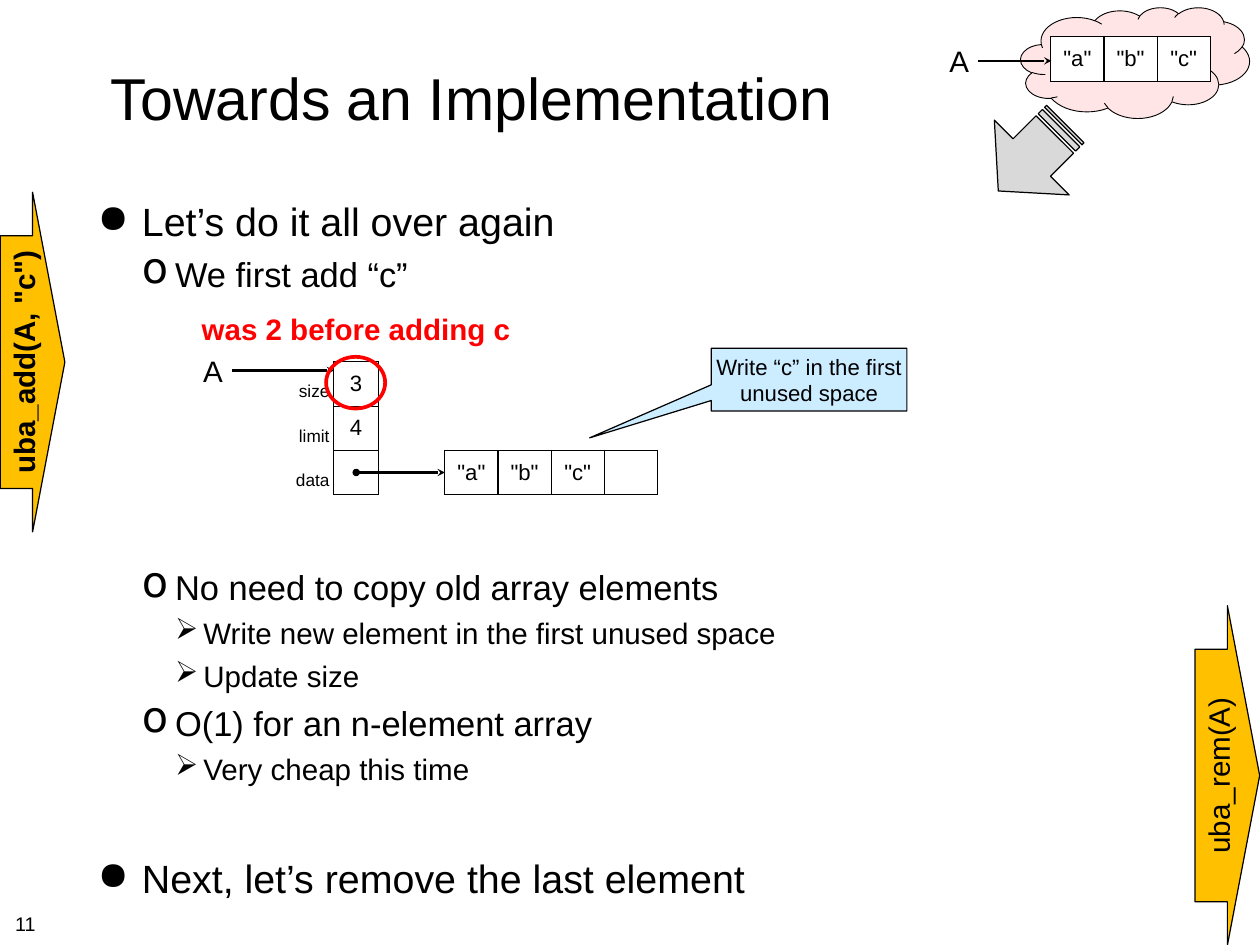
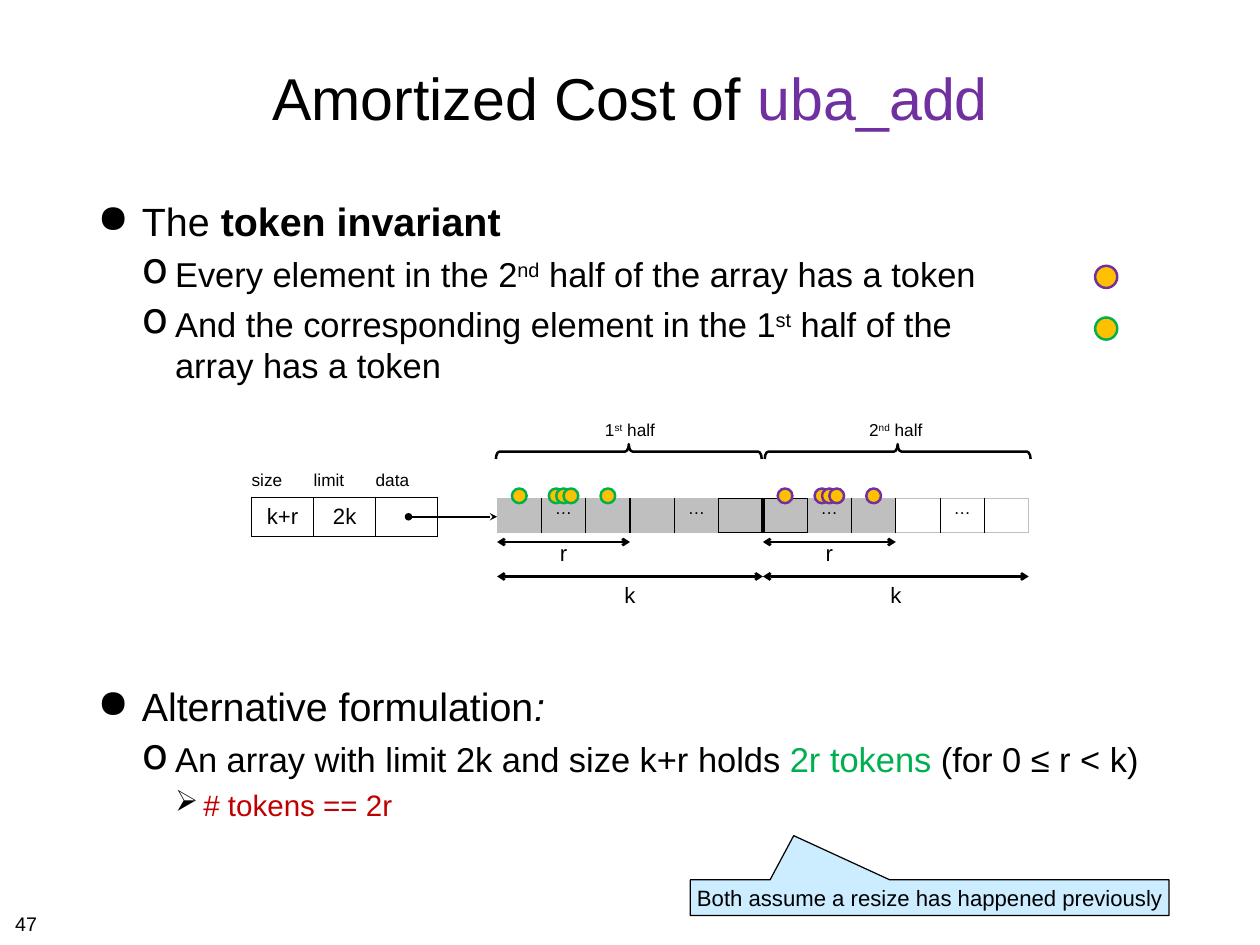
from dataclasses import dataclass, field
from typing import NamedTuple, Optional

import pptx
import pptx.dml.color
import pptx.enum.shapes
import pptx.enum.text
import pptx.oxml
import pptx.oxml.ns
import pptx.util

Pt = pptx.util.Pt
RGB = pptx.dml.color.RGBColor
SHAPE = pptx.enum.shapes.MSO_SHAPE
ALIGN = pptx.enum.text.PP_ALIGN
ANCHOR = pptx.enum.text.MSO_ANCHOR
qn = pptx.oxml.ns.qn

BLACK = RGB(0x00, 0x00, 0x00)
WHITE = RGB(0xFF, 0xFF, 0xFF)
RED = RGB(0xFF, 0x00, 0x00)
DARK_RED = RGB(0xC0, 0x00, 0x00)
PURPLE = RGB(0x70, 0x30, 0xA0)
GREEN = RGB(0x00, 0xB0, 0x50)
GOLD = RGB(0xFF, 0xC0, 0x00)
GRAY = RGB(0xBF, 0xBF, 0xBF)
LIGHT_GRAY = RGB(0xD9, 0xD9, 0xD9)
PINK = RGB(0xFF, 0xE5, 0xE5)
PALE_BLUE = RGB(0xCC, 0xEC, 0xFF)
FONT = "Arial"


class Run(NamedTuple):
    text: str
    color: RGB = BLACK
    bold: bool = False
    italic: bool = False
    superscript: bool = False


class Level(NamedTuple):
    size: float
    margin: float
    hang: float
    before: float
    bullet: str
    bullet_pct: int


LEVELS = (Level(32, 36, 36, 8, "●", 100),
          Level(28, 63, 27, 7, "o", 125),
          Level(24, 86, 23, 6, "➢", 100))


class Item(NamedTuple):
    level: int
    runs: tuple
    gap: float = 0  # room left above for a diagram


class Edge(NamedTuple):
    color: RGB = BLACK
    width: float = 1


BOX = {side: Edge() for side in "LRTB"}


@dataclass
class Cell:
    text: str = ""
    size: float = 18
    align: int = ALIGN.CENTER
    anchor: int = ANCHOR.MIDDLE
    margins: tuple = (7.2, 3.6)
    fill: Optional[RGB] = None
    edges: dict = field(default_factory=lambda: BOX)


class Half(NamedTuple):
    x: float
    brace_x: float
    ordinal: str
    suffix: str
    color: RGB


# Text
def write(p, runs, size: float, align=ALIGN.LEFT) -> None:
    p.alignment = align
    for run in runs:
        for i, piece in enumerate(run.text.split("\n")):
            if i:
                p.add_line_break()
            r = p.add_run()
            r.text = piece
            r.font.name, r.font.size = FONT, Pt(size)
            r.font.bold, r.font.italic = run.bold, run.italic
            r.font.color.rgb = run.color
            if run.superscript:
                r._r.get_or_add_rPr().set("baseline", "30000")


def set_frame(tf, margins, anchor=ANCHOR.TOP, wrap=False) -> None:
    tf.word_wrap, tf.vertical_anchor = wrap, anchor
    tf.margin_left = tf.margin_right = Pt(margins[0])
    tf.margin_top = tf.margin_bottom = Pt(margins[1])


def add_text(s, x, y, w, h, runs, size, align=ALIGN.CENTER,
             anchor=ANCHOR.TOP, margins=(7.2, 3.6), wrap=False):
    sp = s.shapes.add_textbox(Pt(x), Pt(y), Pt(w), Pt(h))
    set_frame(sp.text_frame, margins, anchor, wrap)
    write(sp.text_frame.paragraphs[0], runs, size, align)
    return sp


def add_body(s, items) -> None:
    sp = s.shapes.add_textbox(Pt(75), Pt(156), Pt(881), Pt(543))
    tf = sp.text_frame
    set_frame(tf, (4.3, 4.3), wrap=True)
    for i, item in enumerate(items):
        p = tf.add_paragraph() if i else tf.paragraphs[0]
        level = LEVELS[item.level]
        write(p, item.runs, level.size)
        p.level = item.level
        p.space_before = Pt(level.before + item.gap)
        pPr = p._p.get_or_add_pPr()
        pPr.set("marL", str(Pt(level.margin)))
        pPr.set("indent", str(-Pt(level.hang)))
        color = pptx.oxml.parse_xml(
            '<a:buClr xmlns:a="http://schemas.openxmlformats.org/drawingml/2006/main">'
            f'<a:srgbClr val="{BLACK}"/></a:buClr>')
        pPr.append(color)
        pct = pPr.makeelement(qn("a:buSzPct"), {"val": str(level.bullet_pct * 1000)})
        pPr.append(pct)
        pPr.append(pPr.makeelement(qn("a:buChar"), {"char": level.bullet}))


# Shapes, lines and tables
def add_shape(s, kind, x, y, w, h, fill=None, line=BLACK, width=1.0, rot=0, adj=()):
    sp = s.shapes.add_shape(kind, Pt(x), Pt(y), Pt(w), Pt(h))
    sp.shadow.inherit = False
    sp.rotation = rot
    for i, value in enumerate(adj):
        sp.adjustments[i] = value
    if fill is None:
        sp.fill.background()
    else:
        sp.fill.solid()
        sp.fill.fore_color.rgb = fill
    sp.line.color.rgb, sp.line.width = line, Pt(width)
    return sp


def add_callout(s, x, y, w, h, adj, text: str) -> None:
    sp = add_shape(s, SHAPE.RECTANGULAR_CALLOUT, x, y, w, h, PALE_BLUE, adj=adj)
    set_frame(sp.text_frame, (3.6, 3.6), ANCHOR.MIDDLE)
    write(sp.text_frame.paragraphs[0], [Run(text)], 18, ALIGN.CENTER)


def add_arrow(s, x1, x2, y, head="", tail="stealth", start=None) -> None:
    c = s.shapes.add_connector(pptx.enum.shapes.MSO_CONNECTOR.STRAIGHT,
                               Pt(x1), Pt(y), Pt(x2), Pt(y))
    if start is not None:
        c.begin_connect(start, 3)
    c.line.color.rgb, c.line.width = BLACK, Pt(2)
    ln = c.line._get_or_add_ln()
    for tag, kind in (("a:headEnd", head), ("a:tailEnd", tail)):
        if kind:
            ln.append(ln.makeelement(qn(tag), {"type": kind}))
    spPr = c._element.spPr
    spPr.append(spPr.makeelement(qn("a:effectLst"), {}))


def add_table(s, x, y, cols, rows, cells) -> None:
    t = s.shapes.add_table(len(rows), len(cols), Pt(x), Pt(y),
                           Pt(sum(cols)), Pt(sum(rows))).table
    t.first_row = t.horz_banding = False
    for col, w in zip(t.columns, cols):
        col.width = Pt(w)
    for row, h in zip(t.rows, rows):
        row.height = Pt(h)
    for target, cell in zip(t.iter_cells(), cells):
        target.margin_left = target.margin_right = Pt(cell.margins[0])
        target.margin_top = target.margin_bottom = Pt(cell.margins[1])
        target.vertical_anchor = cell.anchor
        tcPr = target._tc.get_or_add_tcPr()
        for side, edge in cell.edges.items():
            tcPr.append(pptx.oxml.parse_xml(
                f'<a:ln{side} xmlns:a="http://schemas.openxmlformats.org/drawingml/2006/main"'
                f' w="{Pt(edge.width)}"><a:solidFill><a:srgbClr val="{edge.color}"/>'
                f'</a:solidFill></a:ln{side}>'))
        if cell.fill is None:
            target.fill.background()
        else:
            target.fill.solid()
            target.fill.fore_color.rgb = cell.fill
        if cell.text:
            write(target.text_frame.paragraphs[0], [Run(cell.text)], cell.size, cell.align)


def add_array(s, x, y, values) -> None:
    add_table(s, x, y, [43.2] * len(values), [36], [Cell(v, fill=WHITE) for v in values])


def add_variable(s, x, y, arrow_end) -> None:
    sp = add_text(s, x, y, 31, 36, [Run("A")], 24)
    add_arrow(s, x + 31, arrow_end, y + 18, start=sp)


def add_step(s, x, y, run: Run) -> None:
    sp = add_shape(s, SHAPE.DOWN_ARROW, x, y, 276, 52.5, GOLD, rot=270, adj=(0.744, 0.5))
    set_frame(sp.text_frame, (4.3, 4.3), ANCHOR.MIDDLE, wrap=True)
    sp.text_frame.margin_bottom = 0
    write(sp.text_frame.paragraphs[0], [run], 24, ALIGN.CENTER)


def new_slide(prs, title, title_width, number, items):
    s = prs.slides.add_slide(prs.slide_layouts[6])
    add_text(s, 75, 20, title_width, 118, title, 48,
             anchor=ANCHOR.MIDDLE, margins=(4.3, 4.3), wrap=True)
    add_body(s, items)
    add_text(s, 8, 736.5, 27, 25, [Run(number)], 16, ALIGN.LEFT, margins=(4.3, 4.3))
    return s


def build_implementation(prs) -> None:
    s = new_slide(prs, [Run("Towards an Implementation")], 617, "11", [
        Item(0, (Run("Let’s do it all over again"),)),
        Item(1, (Run("We first add “c”"),)),
        Item(1, (Run("No need to copy old array elements"),), 214),
        Item(2, (Run("Write new element in the first unused space"),)),
        Item(2, (Run("Update size"),)),
        Item(1, (Run("O(1) for an n-element array"),)),
        Item(2, (Run("Very cheap this time"),)),
        Item(0, (Run("Next, let’s remove the last element"),), 47.5)])
    add_callout(s, 578, 283, 159, 51, (-1.122, 0.929),
                "Write “c” in the first\nunused space")

    # Header fields and their data array
    add_arrow(s, 289.5, 361.5, 384, head="oval")
    cells = []
    for label, value in (("size", "3"), ("limit", "4"), ("data", "")):
        cells += [Cell(label, 14, ALIGN.RIGHT, ANCHOR.BOTTOM, (3.6, 3.6),
                       edges={"R": Edge()}), Cell(value)]
    add_table(s, 221, 294, [50.4, 36], [36] * 3, cells)
    add_array(s, 361.5, 366, ['"a"', '"b"', '"c"', ""])
    add_variable(s, 157.5, 283, 271.5)
    add_shape(s, SHAPE.OVAL, 265, 290, 48, 42, line=RED, width=3)
    add_text(s, 155, 249, 268.5, 36, [Run("was 2 before adding c", RED, True)], 24)

    # Abstract view in the corner
    add_shape(s, SHAPE.STRIPED_RIGHT_ARROW, 800, 85, 77, 86, LIGHT_GRAY, rot=135)
    add_shape(s, SHAPE.CLOUD, 829.5, 6, 186, 90, PINK, width=0.75)
    add_array(s, 854, 30, ['"a"', '"b"', '"c"'])
    add_variable(s, 764, 31.5, 854.5)

    # Operations before and after
    add_step(s, -111.5, 268, Run('uba_add(A, "c")', bold=True))
    add_step(s, 859.5, 604, Run("uba_rem(A)"))


def array_cell(i: int) -> Cell:
    middle = i in (5, 6)
    rim = Edge() if middle else Edge(GRAY)
    edges = {"L": Edge(GRAY) if i == 0 else Edge(),
             "R": Edge(GRAY) if i == 11 else Edge(), "T": rim, "B": rim}
    if middle:
        edges["R" if i == 5 else "L"] = Edge(BLACK, 3)
    return Cell("…" if i % 3 == 1 else "", 14, anchor=ANCHOR.TOP, margins=(0, 0),
                fill=GRAY if i < 9 else None, edges=edges)


def add_token(s, x, y, size, color) -> None:
    add_shape(s, SHAPE.OVAL, x, y, size, size, GOLD, color, 2)


def build_amortized_cost(prs) -> None:
    s = new_slide(prs, [Run("Amortized Cost of "), Run("uba_add", PURPLE)], 874, "47", [
        Item(0, (Run("The "), Run("token invariant", bold=True))),
        Item(1, (Run("Every element in the 2"), Run("nd", superscript=True),
                 Run(" half of the array has a token"))),
        Item(1, (Run("And the corresponding element in the 1"), Run("st", superscript=True),
                 Run(" half of the \narray has a token"))),
        Item(0, (Run("Alternative formulation"), Run(":", italic=True)), 233),
        Item(1, (Run("An array with limit 2k and size k+r holds "),
                 Run("2r tokens ", GREEN), Run("(for 0 ≤ r < k)"))),
        Item(2, (Run("# tokens == 2r", DARK_RED),))])

    # Header fields and array
    add_table(s, 404, 405.5, [36] * 12, [27], [array_cell(i) for i in range(12)])
    labels = [Cell(label, 14, ALIGN.LEFT, ANCHOR.TOP, (0, 0), edges={"B": Edge()})
              for label in ("size", "limit", "data")]
    values = [Cell(v, margins=(10, 5)) for v in ("k+r", "2k", "")]
    add_table(s, 204.5, 382.5, [50.4] * 3, [21.6, 28.8], labels + values)
    add_arrow(s, 332, 404, 420, head="oval")

    # Halves with tokens, braces and extents
    halves = (Half(404, 505, "1", "st", GREEN), Half(620, 723.5, "2", "nd", PURPLE))
    for half in halves:
        for dx in (12, 84, 42, 48, 54):
            add_token(s, half.x + dx, 397, 12, half.color)
        add_text(s, half.x + 78, 337, 60, 24.5,
                 [Run(half.ordinal), Run(half.suffix, superscript=True), Run(" half")], 14)
        add_shape(s, SHAPE.LEFT_BRACE, half.brace_x, 259, 12, 216, width=2, rot=90,
                  adj=(0.248, 0.5))
        for name, length, y, text_y in (("r", 108, 440.5, 434.5), ("k", 216, 468.5, 468.5)):
            add_arrow(s, half.x, half.x + length, y, "arrow", "arrow")
            add_text(s, half.x + length / 2 - 12, text_y, 24, 29, [Run(name)], 18)

    # Token legend and remark
    for y, color in ((216, PURPLE), (258, GREEN)):
        add_token(s, 890, y, 18, color)
    add_callout(s, 561, 715, 389, 29, (-0.284, -1.738),
                "Both assume a resize has happened previously")


def main() -> None:
    prs = pptx.Presentation()
    prs.slide_width, prs.slide_height = Pt(1024), Pt(768)
    build_implementation(prs)
    build_amortized_cost(prs)
    prs.save("out.pptx")


if __name__ == "__main__":
    main()
